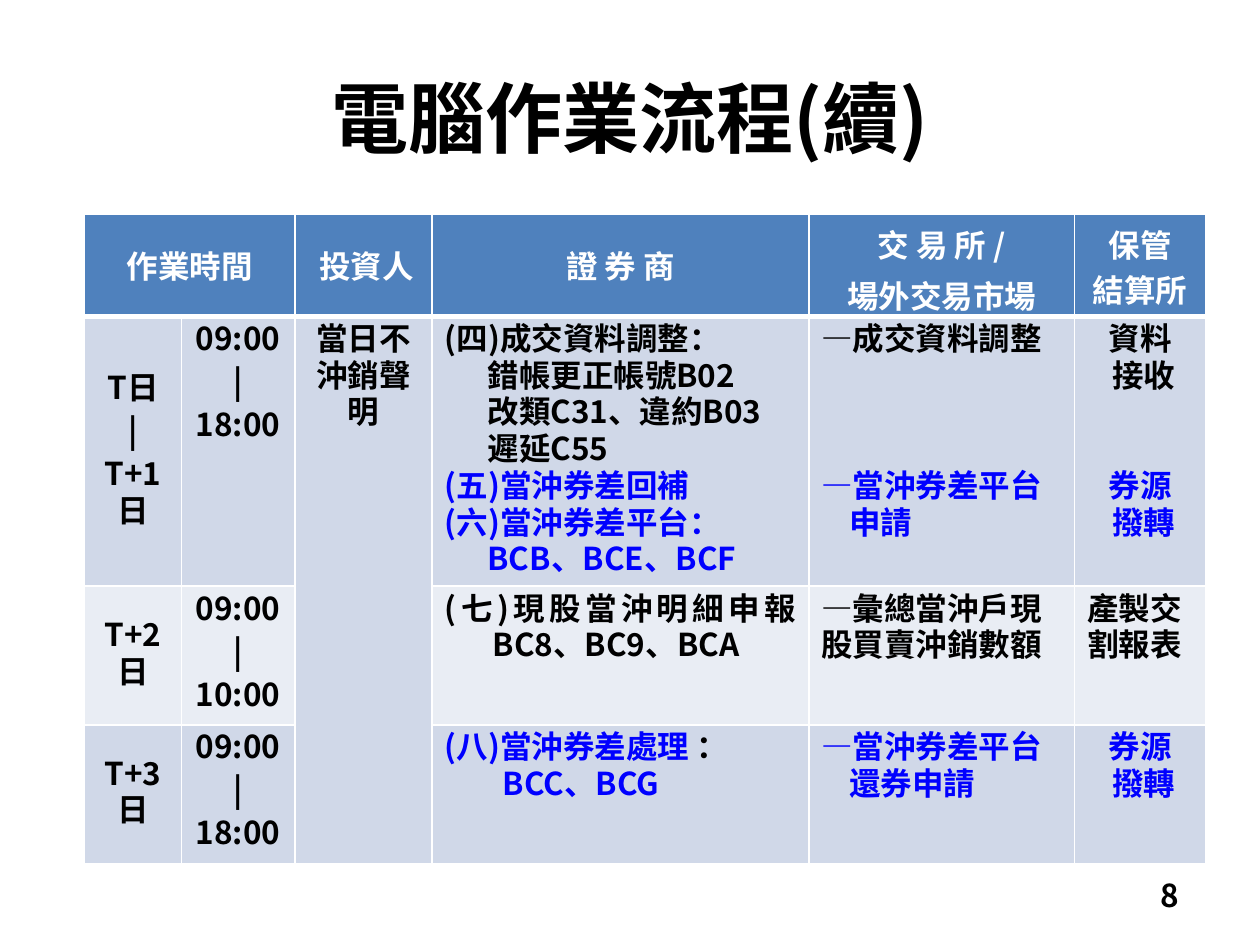
from dataclasses import dataclass

from lxml.etree import SubElement
from pptx import Presentation
from pptx.dml.color import RGBColor
from pptx.enum.text import MSO_ANCHOR as ANCHOR, PP_ALIGN as ALIGN
from pptx.oxml.ns import qn
from pptx.util import Inches, Pt


@dataclass(frozen=True)
class Theme:
    font: str = "Noto Sans CJK SC"
    title: int = 44
    body: int = 18
    line: int = 21
    gap: float = 3.6
    black: str = "000000"
    white: str = "FFFFFF"
    blue: str = "0000FF"
    header: str = "4F81BD"
    bands: tuple = ("D0D8E8", "E9EDF4")


T = Theme()


@dataclass
class Para:
    text: str
    color: str = T.black
    align: ALIGN = ALIGN.LEFT
    left: float = 0
    hang: float = 0
    before: float = 0
    line: int = T.line
    tail: str = ""  # closing run, always black


def style_run(r, size, color):
    r.font.size = Pt(size)
    r.font.bold = True
    r.font.name = T.font
    r.font.color.rgb = RGBColor.from_string(color)
    SubElement(r._r.get_or_add_rPr(), qn("a:ea"), typeface=T.font)


def add_label(s, box, text, size, align):
    tf = s.shapes.add_textbox(*map(Inches, box)).text_frame
    tf.word_wrap = True
    tf.vertical_anchor = ANCHOR.MIDDLE
    p = tf.paragraphs[0]
    p.text = text
    p.alignment = align
    style_run(p.runs[0], size, T.black)


# Paragraph patterns of the table columns
def heads(*lines, before=0, left=0):
    return [Para(t, T.white, ALIGN.CENTER, left, before=before if i else 0, line=0)
            for i, t in enumerate(lines)]


def times(*lines):
    return [Para(t, align=ALIGN.CENTER, before=T.gap if i else 0)
            for i, t in enumerate(lines)]


def broker(text, color=T.black, left=0.0, hang=0.0):
    return Para(text, color, ALIGN.JUSTIFY, left, hang)


def depository(first, second, color=T.black, before=0):
    return [Para(first, color, ALIGN.CENTER, before=before),
            Para(second, color, ALIGN.CENTER, 0.06)]


SUB = 0.34  # indent of the broker's detail lines
COLS = (0.77, 0.9, 1.09, 2.99, 2.11, 1.04)
ROWS = (0.81, 1.8, 1.1, 1.1)
MERGES = (((0, 0), (0, 1)), ((1, 2), (2, 2)))
MIDDLE = {(0, 0), (0, 2), (0, 3), (1, 0), (2, 0), (3, 0)}
OPEN_EDGES = {(1, 2): "B", (2, 2): "B", (3, 2): "T"}

CELLS = [
    [heads("作業時間"), [], heads("投資人", left=0.05), heads("證 券 商"),
     heads("交 易 所 /", "場外交易市場", before=T.gap), heads("保管", "結算所")],
    [times("T日", "|", "T+1日"), times("09:00", "|", "18:00"), times("當日不沖銷聲明"),
     [broker("(四)成交資料調整："),
      broker("錯帳更正帳號B02", left=SUB),
      broker("改類C31、違約B03", left=SUB),
      broker("遲延C55", left=SUB),
      broker("(五)當沖券差回補", T.blue),
      broker("(六)當沖券差平台：", T.blue),
      broker("BCB、BCE、BCF", T.blue, SUB)],
     [Para("—成交資料調整"),
      Para("—當沖券差平台", T.blue, before=3 * T.line),
      Para("申請", T.blue, left=0.22)],
     depository("資料", "接收")
     + depository("券源", "撥轉", T.blue, before=2 * T.line)],
    [times("T+2日"), times("09:00", "|", "10:00"), [],
     [broker("(七)現股當沖明細申報 BC8、BC9、BCA", left=0.38, hang=-0.38)],
     [Para("—彙總當沖戶現股買賣沖銷數額")], [Para("產製交 割報表")]],
    [times("T+3日"), times("09:00", "|", "18:00"), [],
     [Para("(八)當沖券差處理 ", T.blue, tail="："),
      Para("BCC、BCG", T.blue, left=0.46)],
     [Para("—當沖券差平台", T.blue), Para("還券申請", T.blue, left=0.22)],
     depository("券源", "撥轉", T.blue)],
]


def write_para(p, spec):
    p.text = spec.text
    p.alignment = spec.align
    if spec.line:
        p.line_spacing = Pt(spec.line)
    if spec.before:
        p.space_before = Pt(spec.before)
    pPr = p._p.get_or_add_pPr()
    pPr.set("marL", str(Inches(spec.left)))
    pPr.set("indent", str(Inches(spec.hang)))
    style_run(p.runs[0], T.body, spec.color)
    if spec.tail:
        r = p.add_run()
        r.text = spec.tail
        style_run(r, T.body, T.black)


def set_borders(cell, bottom, open_edge):
    tcPr = cell._tc.get_or_add_tcPr()
    for edge in "LRTB":
        width = bottom if edge == "B" else 1
        ln = SubElement(tcPr, qn(f"a:ln{edge}"), w=str(Pt(width)))
        if edge == open_edge:
            SubElement(ln, qn("a:noFill"))
        else:
            fill = SubElement(ln, qn("a:solidFill"))
            SubElement(fill, qn("a:srgbClr"), val=T.white)


def add_schedule(s, box):
    table = s.shapes.add_table(len(ROWS), len(COLS), *map(Inches, box)).table
    for column, width in zip(table.columns, COLS):
        column.width = Inches(width)
    for row, height in zip(table.rows, ROWS):
        row.height = Inches(height)
    for first, last in MERGES:
        table.cell(*first).merge(table.cell(*last))

    for i, row in enumerate(CELLS):
        for j, paras in enumerate(row):
            cell = table.cell(i, j)
            set_borders(cell, 1 if i else 3, OPEN_EDGES.get((i, j)))
            cell.fill.solid()
            color = T.bands[(i - 1) % 2] if i else T.header
            cell.fill.fore_color.rgb = RGBColor.from_string(color)
            cell.vertical_anchor = ANCHOR.MIDDLE if (i, j) in MIDDLE else ANCHOR.TOP
            tf = cell.text_frame
            for k, spec in enumerate(paras):
                write_para(tf.add_paragraph() if k else tf.paragraphs[0], spec)


def main():
    prs = Presentation()
    prs.slide_width, prs.slide_height = Inches(10), Inches(7.5)
    s = prs.slides.add_slide(prs.slide_layouts[6])
    # Title, schedule, page number
    add_label(s, (0.5, 0.3, 9, 1.25), "電腦作業流程(續)", T.title, ALIGN.CENTER)
    add_schedule(s, (0.67, 1.7, sum(COLS), sum(ROWS)))
    add_label(s, (7.13, 6.9, 2.33, 0.4), "8", T.body, ALIGN.RIGHT)
    prs.save("out.pptx")


if __name__ == "__main__":
    main()
